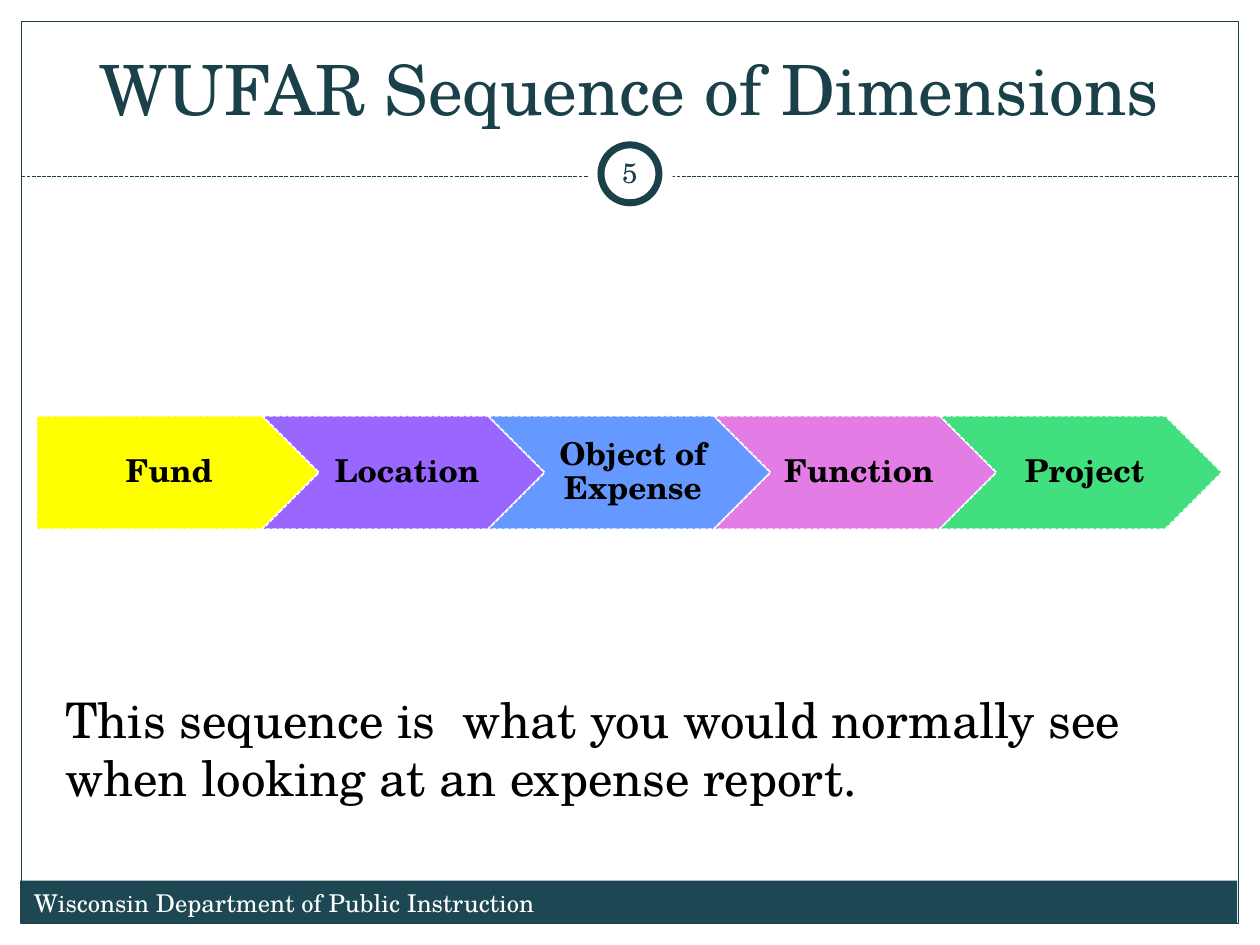
from dataclasses import dataclass

from lxml.etree import SubElement
from pptx import Presentation
from pptx.dml.color import RGBColor
from pptx.enum.dml import MSO_LINE
from pptx.enum.shapes import MSO_CONNECTOR, MSO_SHAPE as SHAPE
from pptx.enum.text import MSO_ANCHOR as ANCHOR, PP_ALIGN as ALIGN
from pptx.oxml.ns import qn
from pptx.util import Inches, Pt

FONT = "TeX Gyre Schola"
TEAL, WHITE, BLACK = "1A4049", "FFFFFF", "000000"
STEP_LEFT, STEP_TOP, STEP_WIDTH, STEP_HEIGHT = 0.29, 3.3, 2.24, 0.9
STEP_PITCH = STEP_WIDTH * 0.8


@dataclass
class Step:
    label: str
    fill: str
    kind: SHAPE = SHAPE.CHEVRON
    left_inset: float = 0.09


STEPS = [
    Step("Fund", "FFFF00", SHAPE.PENTAGON, 0.12),
    Step("Location", "9966FF"),
    Step("Object of Expense", "6699FF"),
    Step("Function", "E37DE5"),
    Step("Project", "41DF7D"),
]


def rgb(value: str) -> RGBColor:
    return RGBColor.from_string(value)


def add_shape(s, kind, box: tuple, fill: str = "", line: str = "", weight: float = 0.75):
    sp = s.shapes.add_shape(kind, *map(Inches, box))
    sp.shadow.inherit = False
    if fill:
        sp.fill.solid()
        sp.fill.fore_color.rgb = rgb(fill)
    else:
        sp.fill.background()
    if line:
        sp.line.color.rgb = rgb(line)
        sp.line.width = Pt(weight)
    else:
        sp.line.fill.background()
    return sp


def set_text(sp, text: str, size: float, color: str, align=ALIGN.LEFT,
             anchor=ANCHOR.TOP, bold: bool = False, insets: tuple = (0.1, 0.05, 0.1, 0.05)):
    tf = sp.text_frame
    tf.text = text
    tf.word_wrap = True
    tf.vertical_anchor = anchor
    tf.margin_left, tf.margin_top, tf.margin_right, tf.margin_bottom = map(Inches, insets)
    p = tf.paragraphs[0]
    p.alignment = align
    font = p.runs[0].font
    font.name, font.size, font.bold = FONT, Pt(size), bold
    font.color.rgb = rgb(color)
    return p


def add_text(s, box: tuple, *args, **kwargs) -> None:
    set_text(s.shapes.add_textbox(*map(Inches, box)), *args, **kwargs)


def add_divider(s, left: float, right: float, y: float) -> None:
    line = s.shapes.add_connector(
        MSO_CONNECTOR.STRAIGHT, Inches(left), Inches(y), Inches(right), Inches(y))
    line.line.color.rgb = rgb(TEAL)
    line.line.width = Pt(0.75)
    line.line.dash_style = MSO_LINE.SQUARE_DOT
    SubElement(line._element.spPr, qn("a:effectLst"))


def add_step(s, index: int, step: Step) -> None:
    box = (STEP_LEFT + index * STEP_PITCH, STEP_TOP, STEP_WIDTH, STEP_HEIGHT)
    sp = add_shape(s, step.kind, box, step.fill, WHITE, 0.9)
    sp.line.dash_style = MSO_LINE.SQUARE_DOT
    p = set_text(sp, step.label, 18, BLACK, ALIGN.CENTER, ANCHOR.MIDDLE, True,
                 (step.left_inset, 0.06, 0.03, 0.06))
    p.line_spacing = 0.9


def main() -> None:
    """Build the slide showing the order of the WUFAR dimensions."""
    prs = Presentation()
    prs.slide_width, prs.slide_height = Inches(10), Inches(7.5)
    s = prs.slides.add_slide(prs.slide_layouts[6])

    add_shape(s, SHAPE.RECTANGLE, (0.16, 6.99, 9.66, 0.34), "1D4853")
    add_shape(s, SHAPE.RECTANGLE, (0.17, 0.17, 9.66, 7.16), line=TEAL)
    add_divider(s, 0.17, 9.83, 1.4)
    add_shape(s, SHAPE.OVAL, (4.67, 1.05, 0.67, 0.67), WHITE)
    add_shape(s, SHAPE.OVAL, (4.77, 1.15, 0.46, 0.46), WHITE, TEAL, 4)

    add_text(s, (0.33, 0.25, 9.33, 0.83), "WUFAR Sequence of Dimensions", 39.6, TEAL,
             ALIGN.CENTER, ANCHOR.BOTTOM)
    add_text(s, (4.75, 1.13, 0.5, 0.48), "5", 16, TEAL, ALIGN.CENTER, ANCHOR.MIDDLE,
             insets=(0.05,) * 4)
    add_text(s, (0.17, 7, 4.42, 0.5), "Wisconsin Department of Public Instruction", 14, WHITE)
    add_text(s, (0.42, 5.42, 9.35, 1.04),
             "This sequence is  what you would normally see when looking at an expense report.",
             28, BLACK)

    for index, step in enumerate(STEPS):
        add_step(s, index, step)

    prs.save("out.pptx")


if __name__ == "__main__":
    main()
